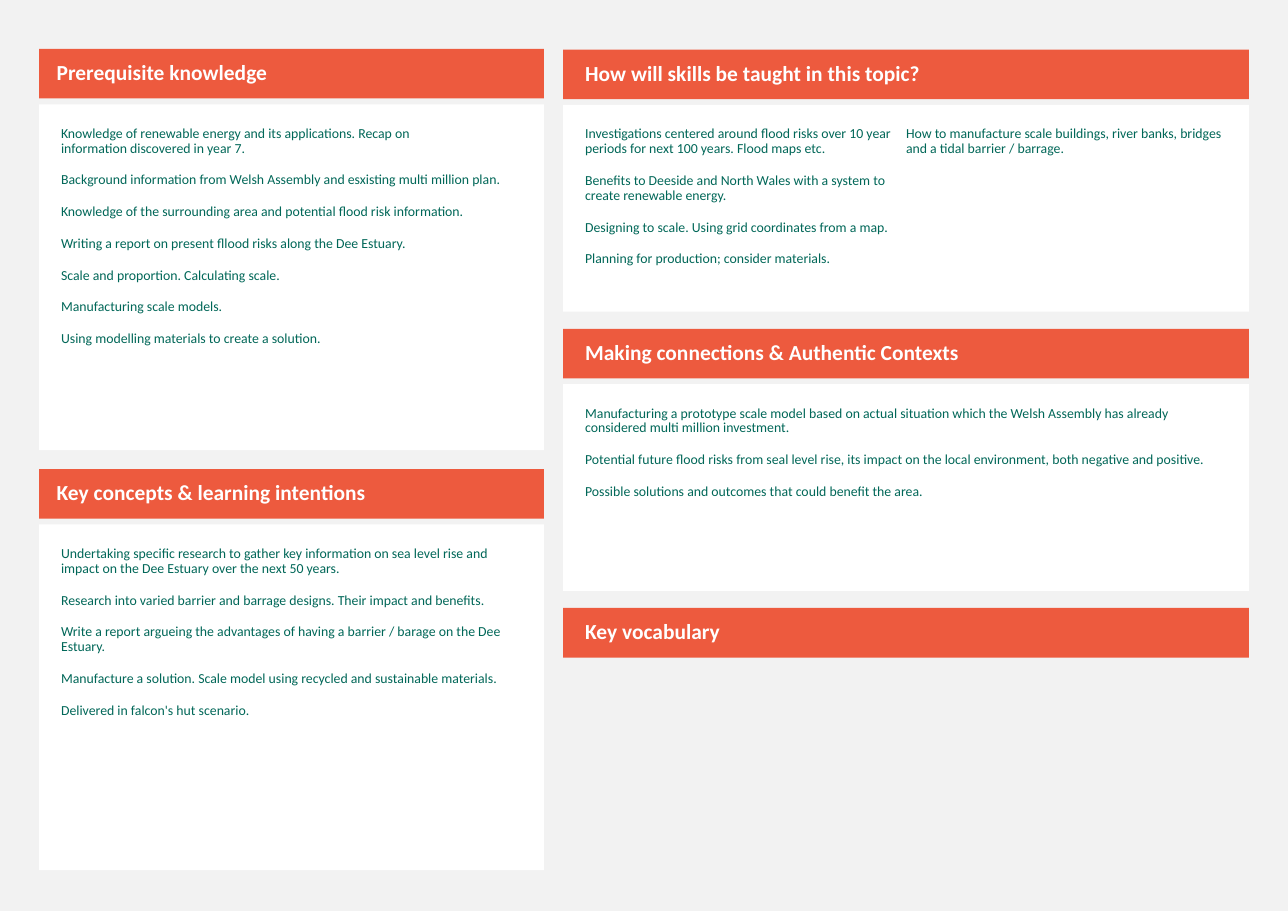
"""Build a topic overview slide with headed panels in two columns."""
from dataclasses import dataclass

from lxml.etree import SubElement
from pptx import Presentation
from pptx.dml.color import RGBColor
from pptx.enum.shapes import MSO_SHAPE
from pptx.enum.text import MSO_ANCHOR, MSO_AUTO_SIZE, PP_ALIGN
from pptx.oxml.ns import qn
from pptx.util import Pt

HARD_SPACE = "~"
LEFT_PANELS = [
    ("Prerequisite knowledge", [
        "Knowledge of renewable energy and its applications. Recap~on information~discovered~in year 7.",
        "Background information from Welsh Assembly and esxisting~multi~million plan.",
        "Knowledge~of the surrounding area and potential flood~risk information.",
        "Writing a report~on present fllood risks~along the Dee~Estuary.",
        "Scale and proportion.~Calculating scale.",
        "Manufacturing scale models.",
        "Using modelling materials~to create a solution.",
    ], 1),
    ("Key concepts & learning intentions", [
        "Undertaking~specific~research to~gather key~information~on sea level rise and impact on the Dee~Estuary"
        " over the next 50~years.",
        "Research~into varied barrier and barrage~designs.~Their impact and benefits.",
        "Write a report argueing~the advantages of having a~barrier / barage~on the Dee Estuary.",
        "Manufacture a solution. Scale model using~recycled and sustainable materials.",
        "Delivered~in~falcon's hut~scenario.",
    ], 1),
]
RIGHT_PANELS = [
    ("How will skills be taught in this topic?", [
        "Investigations~centered around flood risks over~10~year periods for next 100~years. Flood~maps etc.",
        "Benefits to~Deeside and North~Wales~with a~system~to create renewable energy.",
        "Designing~to scale. Using~grid coordinates from~a map.",
        "Planning for production;~consider~materials.",
        "How to~manufacture~scale~buildings, river banks, bridges and a tidal barrier /~barrage.",
    ], 2),
    ("Making connections & Authentic Contexts", [
        "Manufacturing a prototype scale model~based on~actual situation which the Welsh Assembly has already"
        " considered~multi million investment.",
        "Potential future~flood risks from~seal level rise, its impact on the local environment, both negative"
        " and~positive.",
        "Possible solutions and~outcomes that could benefit~the area.",
    ], 1),
    ("Key vocabulary", [], 1),
]


@dataclass(frozen=True)
class Theme:
    """Colours, type and spacing of the slide."""
    background: RGBColor = RGBColor.from_string("F2F2F2")
    accent: RGBColor = RGBColor.from_string("ED5A3E")
    white: RGBColor = RGBColor.from_string("FFFFFF")
    ink: RGBColor = RGBColor.from_string("006758")
    font: str = "Calibri"
    heading_size: int = 14
    body_size: int = 9
    space_before: int = 11
    line_spacing: float = 0.9


@dataclass(frozen=True)
class Column:
    """Geometry of one stack of panels, in points."""
    panels: list
    left: float
    top: float
    width: float
    pitch: float
    body_height: float
    heading_inset: float


THEME = Theme()
HEADING_HEIGHT = 32.4
BODY_OFFSET = 36.2
BODY_INSET = 14.4
COLUMNS = [
    Column(LEFT_PANELS, 25.5, 32, 330, 274.6, 226, 11.5),
    Column(RIGHT_PANELS, 368, 32.4, 448.2, 182.5, 135.2, BODY_INSET),
]


def take_box(slide, available):
    """Return the next free placeholder, or a rectangle when none is left."""
    if available:
        return available.pop(0)
    return slide.shapes.add_shape(MSO_SHAPE.RECTANGLE, 0, 0, Pt(1), Pt(1))


def format_box(shape, position, fill, insets, anchor):
    """Place a box and set its fill, margins and anchor."""
    shape.left, shape.top, shape.width, shape.height = (Pt(value) for value in position)
    shape.fill.solid()
    shape.fill.fore_color.rgb = fill
    shape.line.fill.background()
    shape.shadow.inherit = False
    frame = shape.text_frame
    frame.word_wrap = True
    frame.auto_size = MSO_AUTO_SIZE.NONE
    frame.vertical_anchor = anchor
    frame.margin_left, frame.margin_top, frame.margin_right, frame.margin_bottom = (Pt(inset) for inset in insets)


def write_text(shape, lines, size, color, bold):
    """Write one plain, left-aligned paragraph per line."""
    frame = shape.text_frame
    frame.text = "\n".join(lines).replace(HARD_SPACE, "\u00a0")
    for paragraph in frame.paragraphs:
        paragraph.alignment = PP_ALIGN.LEFT
        paragraph.line_spacing = THEME.line_spacing
        paragraph.space_before = Pt(THEME.space_before)
        paragraph.space_after = Pt(0)
        properties = paragraph._p.get_or_add_pPr()
        properties.set("marL", "0")
        properties.set("indent", "0")
        SubElement(properties, qn("a:buNone"))
        for run in paragraph.runs:
            run.font.name = THEME.font
            run.font.size = Pt(size)
            run.font.bold = bold
            run.font.color.rgb = color


def add_column(slide, column, heading_boxes, body_boxes):
    """Stack the panels of one column at an equal pitch."""
    for index, (heading, lines, text_columns) in enumerate(column.panels):
        top = column.top + index * column.pitch
        bar = take_box(slide, heading_boxes)
        format_box(bar, (column.left, top, column.width, HEADING_HEIGHT), THEME.accent,
                   (column.heading_inset, 3.6, 7.2, 3.6), MSO_ANCHOR.MIDDLE)
        write_text(bar, [heading], THEME.heading_size, THEME.white, True)
        if lines:
            body = take_box(slide, body_boxes)
            format_box(body, (column.left, top + BODY_OFFSET, column.width, column.body_height),
                       THEME.white, [BODY_INSET] * 4, MSO_ANCHOR.TOP)
            write_text(body, lines, THEME.body_size, THEME.ink, False)
            body.text_frame._txBody.bodyPr.set("numCol", str(text_columns))


presentation = Presentation()
presentation.slide_width = Pt(841.68)
presentation.slide_height = Pt(595.44)
comparison_layout = presentation.slide_layouts[4]
slide = presentation.slides.add_slide(comparison_layout)
slide.background.fill.solid()
slide.background.fill.fore_color.rgb = THEME.background

title, *placeholders = slide.placeholders
heading_boxes = [title, *placeholders[0::2]]
body_boxes = placeholders[1::2]
for column in COLUMNS:
    add_column(slide, column, heading_boxes, body_boxes)

presentation.save("out.pptx")
